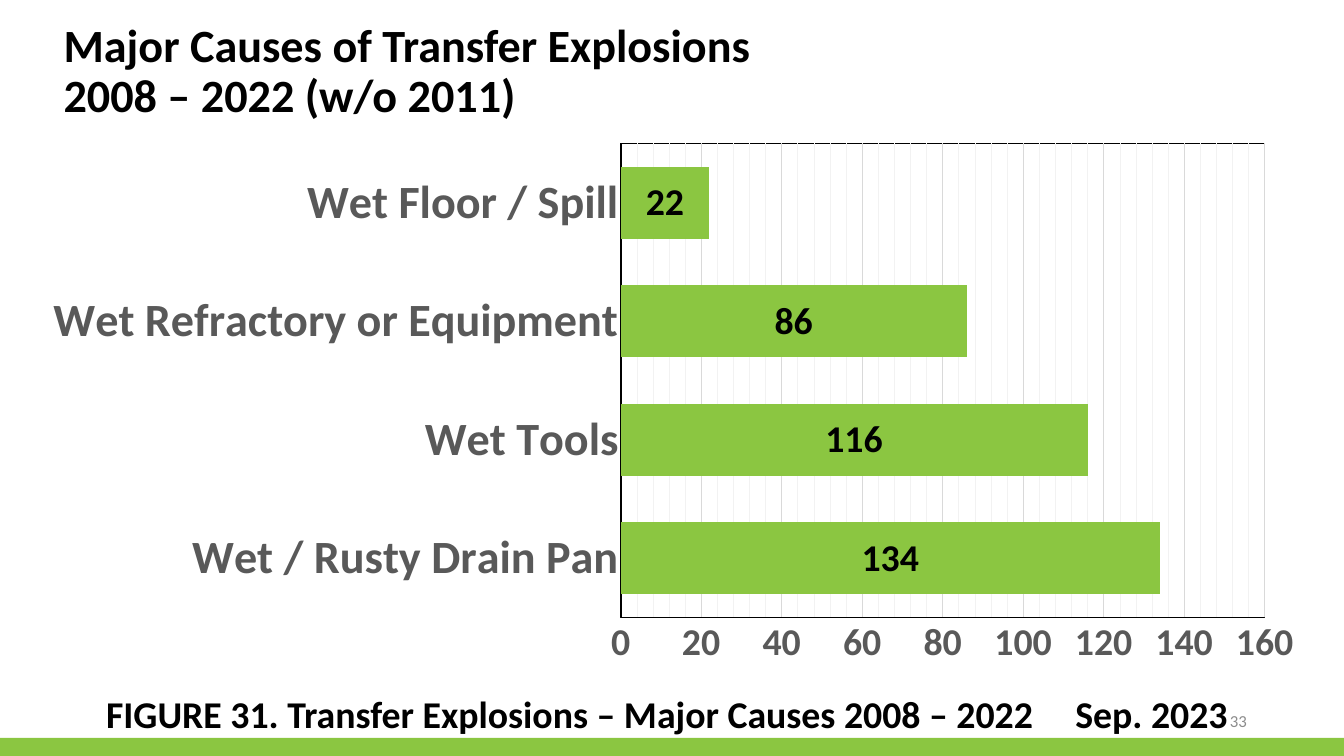
"""Build the slide on major causes of transfer explosions."""
from dataclasses import dataclass

from lxml.etree import SubElement
from pptx import Presentation
from pptx.chart.data import CategoryChartData
from pptx.dml.color import RGBColor
from pptx.enum.chart import XL_CHART_TYPE, XL_LABEL_POSITION, XL_TICK_MARK
from pptx.enum.shapes import MSO_SHAPE
from pptx.enum.text import MSO_ANCHOR, MSO_AUTO_SIZE, PP_ALIGN
from pptx.oxml import parse_xml
from pptx.oxml.ns import nsdecls, qn
from pptx.util import Cm, Pt


@dataclass(frozen=True)
class Theme:
    font: str = "Calibri"
    green: str = "8BC641"
    black: str = "000000"
    white: str = "FFFFFF"
    axis: str = "595959"
    number: str = "8C8C8C"
    major_grid: str = "D9D9D9"
    minor_grid: str = "F2F2F2"
    heading_size: int = 66
    text_size: int = 54
    number_size: int = 24


theme = Theme()


def style(font, size, color, bold=True):
    font.name, font.size, font.bold = theme.font, Pt(size), bold
    font.color.rgb = RGBColor.from_string(color)


def outline_xml(color, width, fill=""):
    return parse_xml(
        f'<c:spPr {nsdecls("c", "a")}>{fill}<a:ln w="{Pt(width)}"><a:solidFill>'
        f'<a:srgbClr val="{color}"/></a:solidFill></a:ln></c:spPr>'
    )


prs = Presentation()
prs.slide_width, prs.slide_height = Cm(67.74), Cm(38.1)
prs.element.set("firstSlideNum", "33")
s = prs.slides.add_slide(prs.slide_layouts[5])

band = s.shapes.add_shape(MSO_SHAPE.RECTANGLE, 0, Cm(37.19), prs.slide_width, Cm(0.91))
band.shadow.inherit = False
band.fill.solid()
band.fill.fore_color.rgb = RGBColor.from_string(theme.green)
band.line.fill.background()

title = s.shapes.title
title.left, title.top, title.width, title.height = Cm(2.95), Cm(1.02), Cm(47.75), Cm(3.53)
tf = title.text_frame
tf.word_wrap = True
tf.auto_size = MSO_AUTO_SIZE.NONE
tf.vertical_anchor = MSO_ANCHOR.TOP
for i, text in enumerate(["Major Causes of Transfer Explosions", "2008 – 2022 (w/o 2011)"]):
    p = tf.add_paragraph() if i else tf.paragraphs[0]
    p.alignment = PP_ALIGN.LEFT
    p.line_spacing = 0.9
    p.space_before = Pt(0)
    r = p.add_run()
    r.text = text
    style(r.font, theme.heading_size, theme.black)

data = CategoryChartData()
data.categories = ["Wet / Rusty Drain Pan", "Wet Tools", "Wet Refractory or Equipment", "Wet Floor / Spill"]
data.add_series("Series 1", [134, 116, 86, 22])
chart = s.shapes.add_chart(
    XL_CHART_TYPE.BAR_CLUSTERED, Cm(1.42), Cm(6.68), Cm(64.92), Cm(27.46), data
).chart
chart.has_legend = False
chart.has_title = False
style(chart.font, 20, theme.black)

plot = chart.plots[0]
plot.gap_width = 65
plot.vary_by_categories = False
series = plot.series[0]
series.format.fill.solid()
series.format.fill.fore_color.rgb = RGBColor.from_string(theme.green)
labels = series.data_labels
labels.show_value = True
labels.position = XL_LABEL_POSITION.CENTER
style(labels.font, theme.text_size, theme.black)

causes, count = chart.category_axis, chart.value_axis
for axis, size in [(causes, theme.heading_size), (count, theme.text_size)]:
    axis.major_tick_mark = axis.minor_tick_mark = XL_TICK_MARK.NONE
    style(axis.tick_labels.font, size, theme.axis)
causes.format.line.color.rgb = RGBColor.from_string(theme.black)
causes.format.line.width = Pt(3)
count.format.line.fill.background()
count.minimum_scale, count.maximum_scale = 0, 160
count.major_unit, count.minor_unit = 20, 4
count.has_major_gridlines = count.has_minor_gridlines = True

area = chart.element.find(".//" + qn("c:plotArea"))
for tag, color in [("majorGridlines", theme.major_grid), ("minorGridlines", theme.minor_grid)]:
    area.find(".//" + qn(f"c:{tag}")).append(outline_xml(color, 0.75))
layout = area.find(qn("c:layout"))
if layout is None:
    layout = parse_xml(f"<c:layout {nsdecls('c')}/>")
    area.insert(0, layout)
manual = SubElement(layout, qn("c:manualLayout"))
for tag, value in [("layoutTarget", "inner"), ("xMode", "edge"), ("yMode", "edge"),
                   ("x", "0.46"), ("y", "0.02"), ("w", "0.5"), ("h", "0.87")]:
    SubElement(manual, qn(f"c:{tag}")).set("val", value)
plot_fill = f'<a:solidFill><a:srgbClr val="{theme.white}"/></a:solidFill>'
area.append(outline_xml(theme.black, 2, plot_fill))

caption = s.shapes.add_textbox(Cm(5.1), Cm(34.95), Cm(57.86), Cm(3.15))
tf = caption.text_frame
tf.word_wrap = True
p = tf.paragraphs[0]
tabs = SubElement(p._p.get_or_add_pPr(), qn("a:tabLst"))
tab = SubElement(tabs, qn("a:tab"))
tab.set("pos", str(Cm(48.85)))
tab.set("algn", "l")
p.line_spacing = 0.9
for text in ["FIGURE 31. Transfer Explosions – Major Causes 2008 – 2022", "\tSep. 2023"]:
    r = p.add_run()
    r.text = text
    style(r.font, theme.text_size, theme.black)

number = s.shapes.add_textbox(Cm(47.85), Cm(35.31), Cm(15.24), Cm(2.03))
tf = number.text_frame
tf.word_wrap = True
tf.vertical_anchor = MSO_ANCHOR.MIDDLE
p = tf.paragraphs[0]
p.alignment = PP_ALIGN.RIGHT
p._p.append(parse_xml(
    f'<a:fld {nsdecls("a")} id="{{B6F15528-21DE-4FAA-801E-634DDDAF4B2B}}" type="slidenum">'
    f'<a:rPr lang="en-US" sz="{theme.number_size * 100}"><a:solidFill>'
    f'<a:srgbClr val="{theme.number}"/></a:solidFill><a:latin typeface="{theme.font}"/></a:rPr>'
    '<a:t>33</a:t></a:fld>'
))

prs.save("out.pptx")
